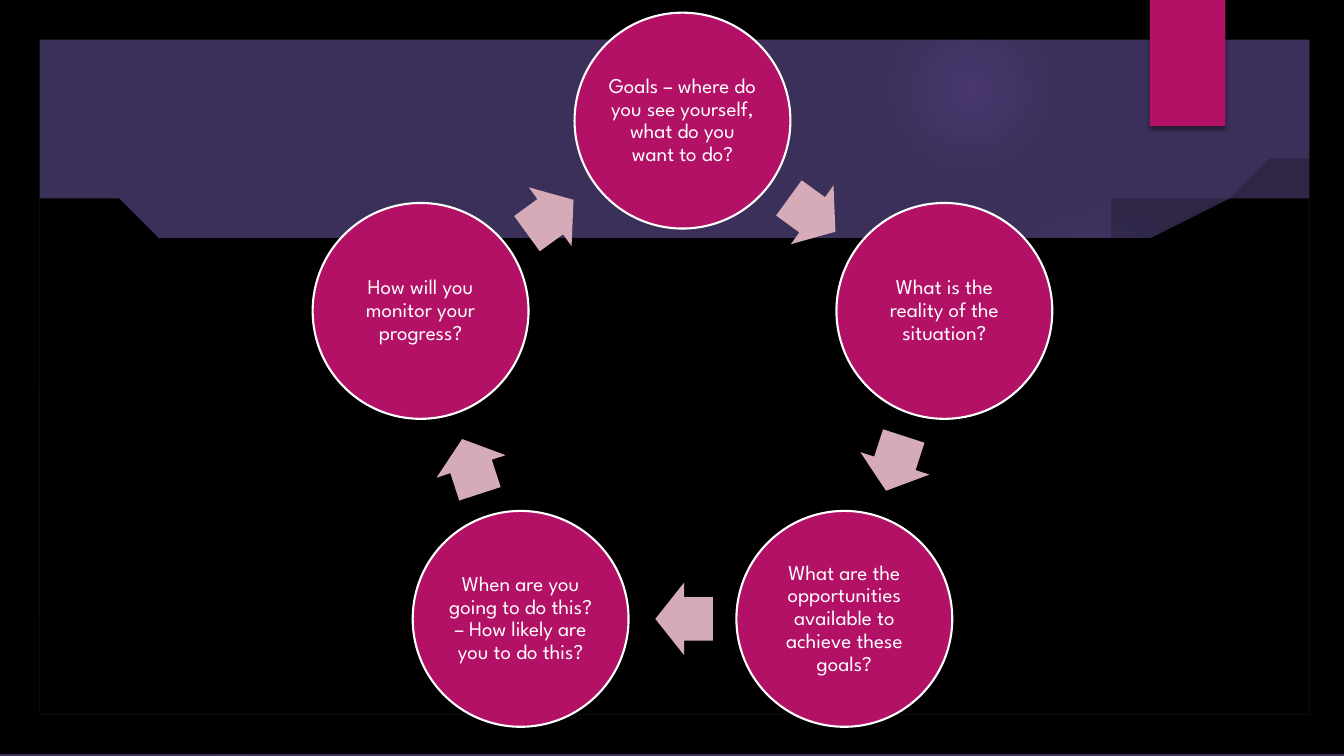
from math import cos, radians, sin

from pptx import Presentation
from pptx.dml.color import RGBColor
from pptx.enum.shapes import MSO_SHAPE
from pptx.enum.text import MSO_ANCHOR, PP_ALIGN
from pptx.oxml import parse_xml
from pptx.oxml.ns import nsdecls, qn
from pptx.util import Cm, Pt

PURPLE = RGBColor(0x3B, 0x30, 0x59)
VIOLET = RGBColor(0x9B, 0x6B, 0xF2)
BLACK = RGBColor(0, 0, 0)
MAGENTA = RGBColor(0xB3, 0x11, 0x66)
PINK = RGBColor(0xD6, 0xAB, 0xB8)
WHITE = RGBColor(0xFF, 0xFF, 0xFF)

PAGE_WIDTH, PAGE_HEIGHT = 33.87, 19.05
CYCLE_X, CYCLE_Y, CYCLE_RADIUS = 17.2, 9.98, 6.94
ARROW_SETBACK = 0.04

GLOWS = [
    (0, 7.42, 11.63, [(0, 11), (36, 10), (75, 0)]),
    (0, 8.05, 6.55, [(0, 8), (36, 8), (72, 0)]),
    (23.9, 16.31, 2.74, [(0, 14), (36, 7), (66, 0)]),
    (23.9, 4.65, 7.82, [(0, 7), (36, 6), (69, 0)]),
    (22.23, 0.03, 4.45, [(0, 14), (36, 7), (73, 0)]),
]
QUESTIONS = [
    "Goals – where do you see yourself, what do you want to do?",
    "What is the reality of the situation?",
    "What are the opportunities available to achieve these goals?",
    "When are you going to do this? – How likely are you to do this?",
    "How will you monitor your progress?",
]


class SlideBuilder:
    font_name = "League Spartan"
    font_size = Pt(15)

    def __init__(self, page):
        self.page = page

    def background(self, color):
        fill = self.page.background.fill
        fill.solid()
        fill.fore_color.rgb = color

    def paint(self, shape, color):
        shape.shadow.inherit = False
        shape.fill.solid()
        shape.fill.fore_color.rgb = color
        shape.line.fill.background()
        return shape

    def preset(self, kind, left, top, width, height, color):
        shape = self.page.shapes.add_shape(kind, Cm(left), Cm(top), Cm(width), Cm(height))
        return self.paint(shape, color)

    def glow(self, left, top, size, stops):
        shape = self.preset(MSO_SHAPE.OVAL, left, top, size, size, VIOLET)
        stop_xml = "".join(
            f'<a:gs pos="{position * 1000}"><a:srgbClr val="{VIOLET}">'
            f'<a:alpha val="{opacity * 1000}"/></a:srgbClr></a:gs>'
            for position, opacity in stops
        )
        gradient = parse_xml(
            f'<a:gradFill {nsdecls("a")} rotWithShape="1"><a:gsLst>{stop_xml}</a:gsLst>'
            '<a:path path="circle"><a:fillToRect l="50000" t="50000" r="50000" b="50000"/>'
            "</a:path></a:gradFill>"
        )
        properties = shape._element.spPr
        properties.replace(properties.find(qn("a:solidFill")), gradient)

    def outline(self, contours, color, opacity=100):
        builder = self.page.shapes.build_freeform(*contours[0][0], scale=Cm(1))
        builder.add_line_segments(contours[0][1:])
        for contour in contours[1:]:
            builder.move_to(*contour[0])
            builder.add_line_segments(contour[1:])
        shape = self.paint(builder.convert_to_shape(), color)
        if opacity < 100:
            tint = shape._element.spPr.find(qn("a:solidFill"))[0]
            tint.append(parse_xml(f'<a:alpha {nsdecls("a")} val="{opacity * 1000}"/>'))

    def tab(self, left, top, width, height):
        shape = self.preset(MSO_SHAPE.RECTANGLE, left, top, width, height, MAGENTA)
        shape._element.spPr.find(qn("a:effectLst")).append(parse_xml(
            f'<a:outerShdw {nsdecls("a")} blurRad="{Pt(3)}" dist="{Pt(2)}" dir="5400000">'
            f'<a:srgbClr val="{BLACK}"><a:alpha val="45000"/></a:srgbClr></a:outerShdw>'
        ))

    def question(self, center_x, center_y, text, size=5.44):
        circle = self.preset(MSO_SHAPE.OVAL, center_x - size / 2, center_y - size / 2,
                             size, size, MAGENTA)
        circle.line.color.rgb = WHITE
        circle.line.width = Pt(1.5)
        frame = circle.text_frame
        frame.text = text
        frame.word_wrap = True
        frame.vertical_anchor = MSO_ANCHOR.MIDDLE
        frame.margin_left = frame.margin_right = Cm(0.05)
        frame.margin_top = frame.margin_bottom = Cm(0.05)
        para = frame.paragraphs[0]
        para.alignment = PP_ALIGN.CENTER
        para.line_spacing = 0.9
        span = para.runs[0]
        span.font.name = self.font_name
        span.font.size = self.font_size
        span.font.color.rgb = WHITE

    def arrow(self, center_x, center_y, rotation, width=1.45, height=1.83):
        shape = self.preset(MSO_SHAPE.RIGHT_ARROW, center_x - width / 2,
                            center_y - height / 2, width, height, PINK)
        shape.adjustments[0] = 0.6
        shape.adjustments[1] = 0.5
        shape.rotation = rotation


def rectangle(left, top, right, bottom):
    return [(left, top), (left, bottom), (right, bottom), (right, top)]


def draw_backdrop(builder):
    builder.background(PURPLE)
    for glow in GLOWS:
        builder.glow(*glow)

    steps = [step / 30 for step in range(31)]
    shade = [(23.62 + 8.97 * t, 6.17 - 0.94 * t - 1.02 * t * t) for t in steps]
    builder.outline([shade + [(32.59, 6.3), (23.62, 6.3)]], BLACK, 20)

    curve = [(1.27 + 31.33 * t, 6.3 - 1.12 * (2 * t - 1) ** 2) for t in steps]
    builder.outline([curve + [(32.6, 17.78), (1.27, 17.78)]], BLACK)

    border = rectangle(0, 0, PAGE_WIDTH, PAGE_HEIGHT)
    opening = rectangle(1.32, 1.32, 32.54, 17.73)[::-1]
    builder.outline([border, opening], BLACK)
    builder.tab(28.98, 0, 1.9, 3.18)


def draw_cycle(builder):
    step = 360 / len(QUESTIONS)
    arrow_radius = CYCLE_RADIUS * cos(radians(step / 2))
    for index, text in enumerate(QUESTIONS):
        angle = radians(index * step)
        builder.question(CYCLE_X + CYCLE_RADIUS * sin(angle),
                         CYCLE_Y - CYCLE_RADIUS * cos(angle), text)
        rotation = (index + 0.5) * step
        turn = radians(rotation)
        builder.arrow(CYCLE_X + arrow_radius * sin(turn) - ARROW_SETBACK * cos(turn),
                      CYCLE_Y - arrow_radius * cos(turn) - ARROW_SETBACK * sin(turn),
                      rotation)


def main():
    deck = Presentation()
    deck.slide_width = Cm(PAGE_WIDTH)
    deck.slide_height = Cm(PAGE_HEIGHT)
    builder = SlideBuilder(deck.slides.add_slide(deck.slide_layouts[6]))
    draw_backdrop(builder)
    draw_cycle(builder)
    deck.save("out.pptx")


if __name__ == "__main__":
    main()
